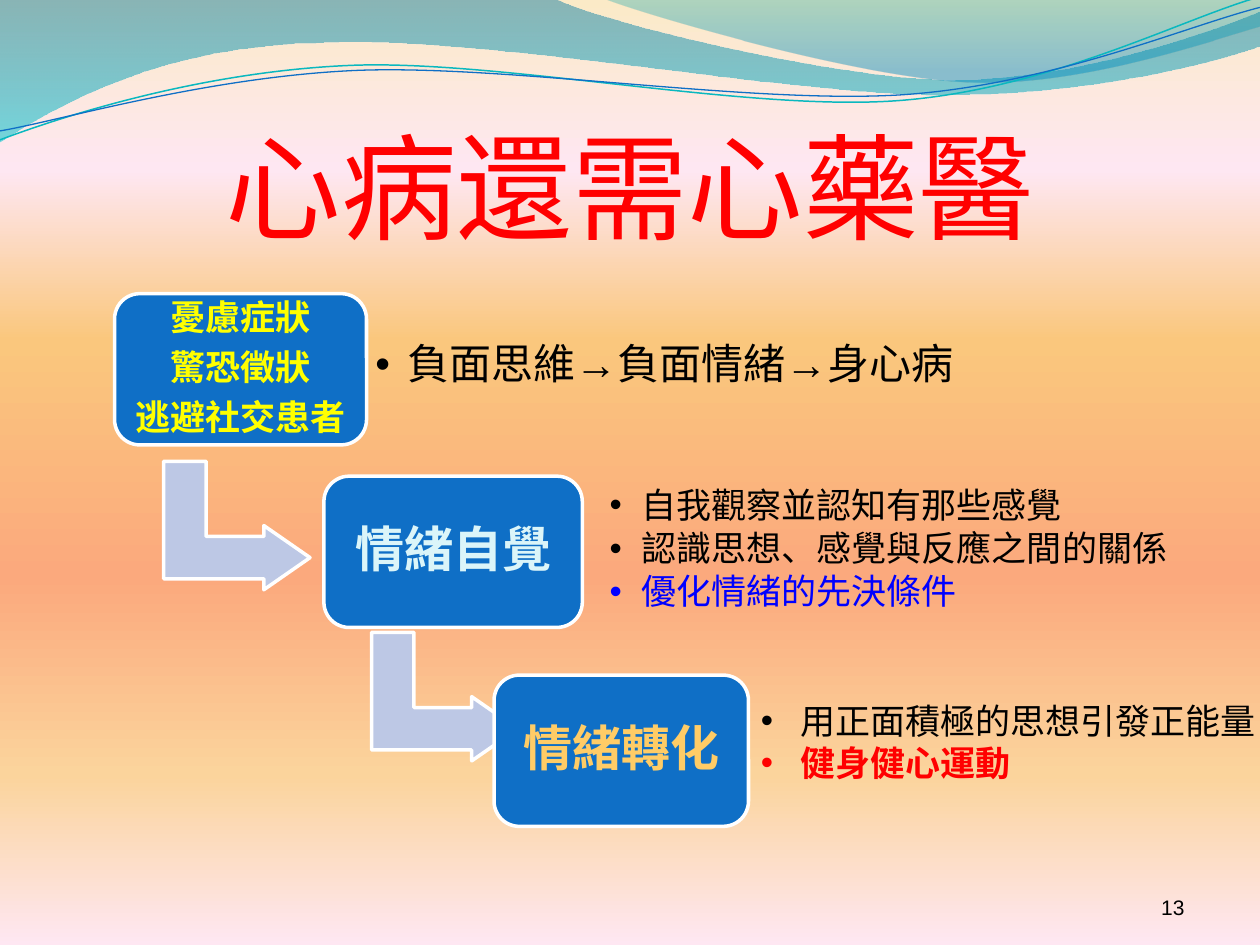
from lxml import etree
from pptx import Presentation
from pptx import util as u
from pptx.dml.color import RGBColor
from pptx.enum import shapes, text
from pptx.oxml import ns

RED = RGBColor(0xFF, 0x00, 0x00)
BLUE = RGBColor(0x00, 0x00, 0xFF)
YELLOW = RGBColor(0xFF, 0xFF, 0x00)
BLACK = RGBColor(0x00, 0x00, 0x00)
WHITE = RGBColor(0xFF, 0xFF, 0xFF)
ICE = RGBColor(0xDB, 0xF5, 0xF9)
AMBER = RGBColor(0xFF, 0xCC, 0x66)
BOX_BLUE = RGBColor(0x0F, 0x6F, 0xC6)
ARROW_BLUE = RGBColor(0xBD, 0xC8, 0xE5)
TEAL = RGBColor(0x0A, 0xB8, 0xBF)
WAVE_DARK = RGBColor(0x00, 0x74, 0xA1)
WAVE_LIGHT = RGBColor(0x00, 0xC6, 0xCF)
CREST_DARK = RGBColor(0x00, 0xA1, 0xA9)
CREST_LIGHT = RGBColor(0x00, 0x8B, 0xBF)
CREAM = RGBColor(0xFB, 0xEA, 0xC7)
PINK = RGBColor(0xFE, 0xE7, 0xF2)
GOLD = RGBColor(0xFA, 0xC7, 0x7D)
CORAL = RGBColor(0xFB, 0xA9, 0x7D)
SAND = RGBColor(0xFB, 0xD4, 0x9C)

SANS = "Noto Sans CJK TC"
SERIF = "TeX Gyre Pagella"
ARIAL = "Arial"


def add_node(parent, tag, **attributes):
    return etree.SubElement(parent, ns.qn(tag), attributes)


def set_gradient(fill, element, stops):
    fill.gradient()
    fill.gradient_angle = 270
    stop_list = next(element.iter(ns.qn("a:gsLst")))
    for stop in list(stop_list):
        stop_list.remove(stop)
    for position, color, opacity in stops:
        stop = add_node(stop_list, "a:gs", pos=str(position * 1000))
        node = add_node(stop, "a:srgbClr", val=str(color))
        if opacity < 100:
            add_node(node, "a:alpha", val=str(opacity * 1000))


def add_outline(slide, left, top, start, segments, close):
    points = [(u.Cm(left + x), u.Cm(top + y))
              for x, y in (start, *(point for segment in segments for point in segment))]
    builder = slide.shapes.build_freeform(*points[0])
    builder.add_line_segments(points[1:], close=close)
    shape = builder.convert_to_shape()
    shape.shadow.inherit = False
    lines = list(shape.element.iter(ns.qn("a:lnTo")))
    for segment in segments:
        pieces, lines = lines[:len(segment)], lines[len(segment):]
        if len(segment) == 3:
            curve = etree.Element(ns.qn("a:cubicBezTo"))
            pieces[0].addprevious(curve)
            for piece in pieces:
                curve.append(piece[0])
                piece.getparent().remove(piece)
    return shape


def add_header(slide, left, top):
    wave = [((11.18, -0.03),), ((12.09, 0.43), (16.87, 1.6), (19.25, 1.6)),
            ((21.67, 1.6), (24.33, 0.66), (25.4, 0.23)), ((25.43, 0.91),),
            ((24.97, 1.12), (22.1, 1.93), (18.95, 1.91)),
            ((15.8, 1.91), (9.7, 0.71), (6.53, 0.86)),
            ((3.28, 0.89), (1.17, 2.11), (-0.03, 2.87))]
    crest = [((12.93, 0.28), (17.32, 1.57), (19.53, 1.65)),
             ((21.74, 1.75), (24.41, 0.81), (25.4, 0.53)), ((25.4, 0),)]
    for start, segments, stops in (
            ((0, -0.03), wave, [(0, WAVE_DARK, 45), (100, WAVE_LIGHT, 55)]),
            ((12.17, -0.03), crest, [(0, CREST_DARK, 30), (80, CREST_LIGHT, 45)])):
        shape = add_outline(slide, left, top, start, segments, True)
        set_gradient(shape.fill, shape.element, stops)
        shape.line.fill.background()

    teal_line = [((1.22, 2.36), (4.01, 1.45), (7.04, 1.32)),
                 ((10.03, 1.19), (15.06, 2.26), (18.11, 2.03)),
                 ((21.16, 1.8), (23.83, 0.38), (25.35, -0.05))]
    blue_line = [((1.19, 2.44), (4.17, 1.55), (7.19, 1.42)),
                 ((10.24, 1.3), (15.16, 2.11), (18.21, 1.91)),
                 ((21.23, 1.7), (23.9, 0.53), (25.4, 0.15))]
    for start, segments, color, width in (((0, 2.82), teal_line, TEAL, 0.85),
                                          ((0, 2.64), blue_line, BOX_BLUE, 0.75)):
        shape = add_outline(slide, left, top, start, segments, False)
        shape.fill.background()
        shape.line.color.rgb = color
        shape.line.width = u.Pt(width)


def write_text(frame, lines, font_name, size, align, anchor, insets,
               line_spacing=1.0, after=0, indent=0):
    frame.word_wrap = True
    frame.vertical_anchor = anchor
    (frame.margin_left, frame.margin_top,
     frame.margin_right, frame.margin_bottom) = map(u.Cm, insets)
    for index, (content, color, bold) in enumerate(lines):
        paragraph = frame.paragraphs[0] if index == 0 else frame.add_paragraph()
        paragraph.text = content
        paragraph.alignment = align
        paragraph.line_spacing = line_spacing
        paragraph.space_after = u.Pt(after)
        if indent:
            properties = paragraph._p.get_or_add_pPr()
            properties.set("marL", str(u.Cm(indent)))
            properties.set("indent", str(-u.Cm(indent)))
            add_node(properties, "a:buFont", typeface=ARIAL)
            add_node(properties, "a:buChar", char="•")
        font = paragraph.font
        font.name = font_name
        font.size = u.Pt(size)
        font.bold = bold
        font.color.rgb = color
        add_node(paragraph._p.pPr.find(ns.qn("a:defRPr")), "a:ea",
                 typeface=SANS if font_name == SANS else ARIAL)


def add_text(slide, box, *settings, **options):
    shape = slide.shapes.add_textbox(*map(u.Cm, box))
    write_text(shape.text_frame, *settings, **options)


def add_block(slide, kind, box, color):
    shape = slide.shapes.add_shape(kind, *map(u.Cm, box))
    shape.shadow.inherit = False
    shape.fill.solid()
    shape.fill.fore_color.rgb = color
    shape.line.color.rgb = WHITE
    shape.line.width = u.Pt(2)
    return shape


def add_step(slide, box, lines, size, inset):
    shape = add_block(slide, shapes.MSO_SHAPE.ROUNDED_RECTANGLE, box, BOX_BLUE)
    shape.adjustments[0] = 0.167
    write_text(shape.text_frame, lines, SERIF, size, text.PP_ALIGN.CENTER,
               text.MSO_ANCHOR.MIDDLE, [inset] * 4, 0.9, size * 0.35)


def add_bent_arrow(slide, left, top):
    shape = add_block(slide, shapes.MSO_SHAPE.BENT_UP_ARROW,
                      (left, top, 2.59, 2.95), ARROW_BLUE)
    shape.rotation = 90
    for index, value in enumerate((0.33, 0.25, 0.36)):
        shape.adjustments[index] = value


def add_notes_beside(slide, box, lines, size, inset):
    add_text(slide, box, lines, SERIF, size, text.PP_ALIGN.LEFT, text.MSO_ANCHOR.MIDDLE,
             [inset] * 4, line_spacing=0.9, after=size * 0.15, indent=0.64)


def add_staircase(slide, left, top):
    def at(x, y, width, height):
        return left + x, top + y, width, height

    add_bent_arrow(slide, left + 1.17, top + 3.2)
    symptoms = [(content, YELLOW, True) for content in ("憂慮症狀", "驚恐徵狀", "逃避社交患者")]
    add_step(slide, at(0, 0, 5.08, 3.05), symptoms, 20, 0.2)
    add_notes_beside(slide, at(5.01, 0.61, 12.9, 1.7),
                     [("負面思維→負面情緒→身心病", BLACK, False)], 24, 0.25)
    add_bent_arrow(slide, left + 5.36, top + 6.65)
    add_step(slide, at(4.22, 3.68, 5.21, 3.05), [("情緒自覺", ICE, True)], 28, 0.3)
    add_notes_beside(slide, at(9.78, 3.2, 11.96, 3.94),
                     [("自我觀察並認知有那些感覺", BLACK, False),
                      ("認識思想、感覺與反應之間的關係", BLACK, False),
                      ("優化情緒的先決條件", BLUE, False)], 20, 0.2)
    add_step(slide, at(7.65, 7.69, 5.13, 3.05), [("情緒轉化", AMBER, True)], 28, 0.3)
    add_text(slide, at(12.78, 8.05, 10.59, 1.96),
             [("用正面積極的思想引發正能量", BLACK, False), ("健身健心運動", RED, True)],
             ARIAL, 20, text.PP_ALIGN.LEFT, text.MSO_ANCHOR.TOP,
             (0.25, 0.13, 0.25, 0.13), indent=0.79)


def main():
    presentation = Presentation()
    presentation.slide_width = u.Cm(25.4)
    presentation.slide_height = u.Cm(19.05)
    slide = presentation.slides.add_slide(presentation.slide_layouts[6])
    set_gradient(slide.background.fill, slide.element,
                 [(0, CREAM, 100), (18, PINK, 100), (36, GOLD, 100),
                  (61, CORAL, 100), (82, SAND, 100), (100, PINK, 100)])
    add_header(slide, 0, 0)
    add_text(slide, (1.27, 1.96, 22.86, 3.18), [("心病還需心藥醫", RED, False)], SANS, 66,
             text.PP_ALIGN.CENTER, text.MSO_ANCHOR.BOTTOM, (0, 0.13, 0, 0))
    add_staircase(slide, 2.31, 5.92)
    add_text(slide, (22.02, 17.65, 2.11, 1.02), [("13", BLACK, False)], ARIAL, 12,
             text.PP_ALIGN.RIGHT, text.MSO_ANCHOR.BOTTOM, (0.25, 0.13, 0.25, 0.13))
    presentation.save("out.pptx")


if __name__ == "__main__":
    main()
